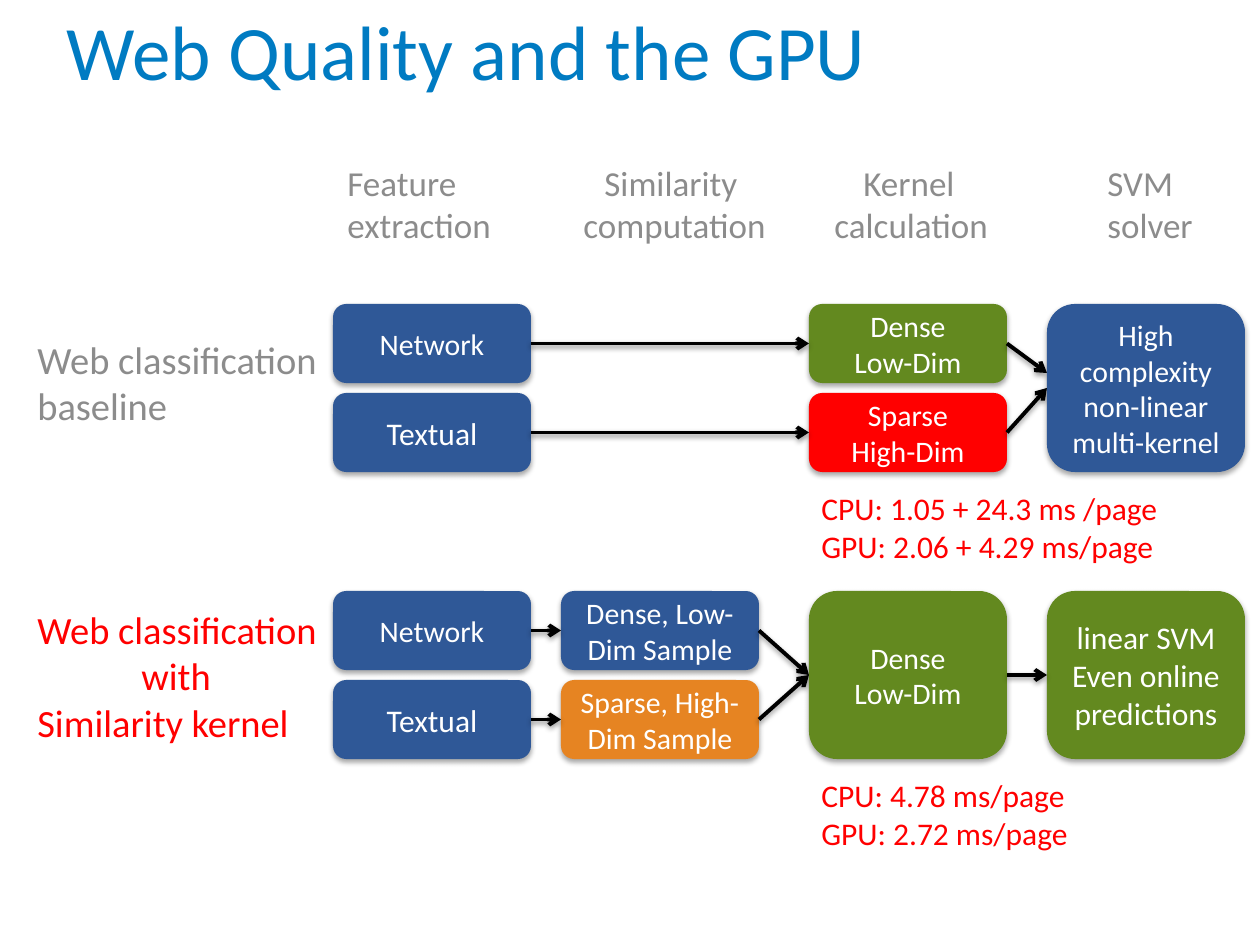
"""Build the slide that compares two web classification pipelines on the GPU."""
from lxml.etree import SubElement
from pptx import Presentation
from pptx.dml.color import RGBColor
from pptx.enum.shapes import MSO_CONNECTOR as Connector, MSO_SHAPE as Shape
from pptx.enum.text import MSO_ANCHOR as Anchor, MSO_AUTO_SIZE as AutoSize, PP_ALIGN as Align
from pptx.oxml.ns import qn
from pptx.util import Emu, Pt

COLORS = {
    "title": "007BC2", "blue": "2F5897", "green": "63891F", "red": "FF0000",
    "orange": "E68422", "gray": "8C8C8C", "white": "FFFFFF", "black": "000000",
}
EMU_PER_PX = 914400 / 126
BOX_WIDTH, BOX_HEIGHT, ROW_PITCH = 198, 79, 89
TALL_HEIGHT = ROW_PITCH + BOX_HEIGHT
FEATURE, SIMILARITY, KERNEL, SOLVER = 333, 561, 809, 1047
BASELINE_TOP, SAMPLE_TOP = 304, 591
HEADING_TOP, HEADING_HEIGHT = 155, 97


def px(*lengths):
    """Turn pixel lengths into EMU."""
    return [Emu(round(length * EMU_PER_PX)) for length in lengths]


def color(name):
    """Look up a named colour."""
    return RGBColor.from_string(COLORS[name])


class SlideBuilder:
    """Hold the text style and the current slide."""

    def __init__(self, slide, font_name):
        """Keep the slide and the font name."""
        self.slide = slide
        self.font_name = font_name

    def fill_text(self, frame, lines, size, tint, indents=None, **formats):
        """Fill a text frame with one paragraph per line."""
        for index, line in enumerate(lines):
            paragraph = frame.paragraphs[0] if index == 0 else frame.add_paragraph()
            paragraph.text = line
            indent = (indents or {}).get(index)
            if indent:
                paragraph._p.get_or_add_pPr().set("marL", str(px(indent)[0]))
            for key, value in formats.items():
                setattr(paragraph, key, value)
            for key, value in {"name": self.font_name, "size": Pt(size)}.items():
                setattr(paragraph.font, key, value)
            paragraph.font.color.rgb = color(tint)

    def shadow(self, shape, distance, opacity):
        """Give a finished shape a soft shadow below it."""
        effects = SubElement(shape._element.spPr, qn("a:effectLst"))
        outer = SubElement(effects, qn("a:outerShdw"), blurRad=str(Pt(3.1)),
                           dist=str(Pt(distance)), dir="5400000", rotWithShape="0")
        tint = SubElement(outer, qn("a:srgbClr"), val=COLORS["black"])
        SubElement(tint, qn("a:alpha"), val=str(opacity * 1000))

    def title(self, text, left, top, width, height):
        """Place and fill the title placeholder."""
        title = self.slide.shapes.title
        title.left, title.top, title.width, title.height = px(left, top, width, height)
        frame = title.text_frame
        settings = {"auto_size": AutoSize.NONE, "word_wrap": True,
                    "vertical_anchor": Anchor.BOTTOM}
        for key, value in settings.items():
            setattr(frame, key, value)
        self.fill_text(frame, [text], 44, "title", alignment=Align.LEFT, line_spacing=Pt(58))

    def box(self, left, top, lines, fill, size=17, height=BOX_HEIGHT):
        """Draw a rounded step of a pipeline."""
        shape = self.slide.shapes.add_shape(
            Shape.ROUNDED_RECTANGLE, *px(left, top, BOX_WIDTH, height))
        shape.fill.solid()
        shape.fill.fore_color.rgb = color(fill)
        shape.line.fill.background()
        self.shadow(shape, 1.8, 35)
        shape.text_frame.vertical_anchor = Anchor.MIDDLE
        self.fill_text(shape.text_frame, lines, size, "white", alignment=Align.CENTER)

    def arrow(self, *ends):
        """Draw an arrow from one point to another."""
        connector = self.slide.shapes.add_connector(Connector.STRAIGHT, *px(*ends))
        connector.line.color.rgb = color("black")
        connector.line.width = Pt(2.25)
        SubElement(connector.line._get_or_add_ln(), qn("a:tailEnd"), type="arrow")
        self.shadow(connector, 1.6, 38)

    def label(self, left, top, width, height, lines, size, tint, indents=None):
        """Add free-standing text."""
        frame = self.slide.shapes.add_textbox(*px(left, top, width, height)).text_frame
        frame.word_wrap = True
        self.fill_text(frame, lines, size, tint, indents)


def main():
    """Build and save the slide."""
    presentation = Presentation()
    presentation.slide_width, presentation.slide_height = px(1260, 945)
    slide = presentation.slides.add_slide(presentation.slide_layouts[5])
    builder = SlideBuilder(slide, "Calibri")
    builder.title("Web Quality and the GPU", 54, 1, 1150, 101)

    headings = [
        (335, 198, ["Feature extraction"], None),
        (571, 210, ["Similarity", "computation"], {0: 21}),
        (822, 181, ["Kernel", "calculation"], {0: 29}),
        (1095, 112, ["SVM", "solver"], None),
    ]
    for left, width, lines, indents in headings:
        builder.label(left, HEADING_TOP, width, HEADING_HEIGHT, lines, 20, "gray", indents)

    builder.label(25, 330, 310, 106, ["Web classification", "baseline"], 22, "gray")
    builder.label(25, 600, 310, 152,
                  ["Web classification", "with", "Similarity kernel"], 22, "red", {1: 104})

    steps = [
        ("Network", 17, ["Dense", "Low-Dim"], "green", 373, "Dense, Low-Dim Sample", "blue"),
        ("Textual", 18, ["Sparse", "High-Dim"], "red", 388, "Sparse, High-Dim Sample", "orange"),
    ]
    sample_middle = SAMPLE_TOP + TALL_HEIGHT // 2
    for row, (feature, size, kernel, fill, solver_y, sample, sample_fill) in enumerate(steps):
        top = BASELINE_TOP + row * ROW_PITCH
        middle = top + BOX_HEIGHT / 2
        builder.box(FEATURE, top, [feature], "blue", size)
        builder.box(KERNEL, top, kernel, fill)
        builder.arrow(FEATURE + BOX_WIDTH, middle, KERNEL, middle)
        builder.arrow(KERNEL + BOX_WIDTH, middle, SOLVER, solver_y)

        top = SAMPLE_TOP + row * ROW_PITCH
        middle = top + BOX_HEIGHT / 2
        builder.box(FEATURE, top, [feature], "blue", size)
        builder.box(SIMILARITY, top, [sample], sample_fill)
        builder.arrow(FEATURE + BOX_WIDTH, middle, SIMILARITY, middle)
        builder.arrow(SIMILARITY + BOX_WIDTH, middle, KERNEL, sample_middle)

    tall_boxes = [
        (SOLVER, BASELINE_TOP, ["High complexity non-linear", "multi-kernel"], "blue", 17),
        (KERNEL, SAMPLE_TOP, ["Dense", "Low-Dim"], "green", 17),
        (SOLVER, SAMPLE_TOP, ["linear SVM", "Even online predictions"], "green", 18),
    ]
    for tall_box in tall_boxes:
        builder.box(*tall_box, height=TALL_HEIGHT)
    builder.arrow(KERNEL + BOX_WIDTH, sample_middle, SOLVER, sample_middle)

    timings = [
        (483, ["CPU: 1.05 + 24.3 ms /page", "GPU: 2.06 + 4.29 ms/page"]),
        (770, ["CPU: 4.78 ms/page", "GPU: 2.72 ms/page"]),
    ]
    for top, lines in timings:
        builder.label(KERNEL, top, 380, 89, lines, 18, "red")

    presentation.save("out.pptx")


if __name__ == "__main__":
    main()
